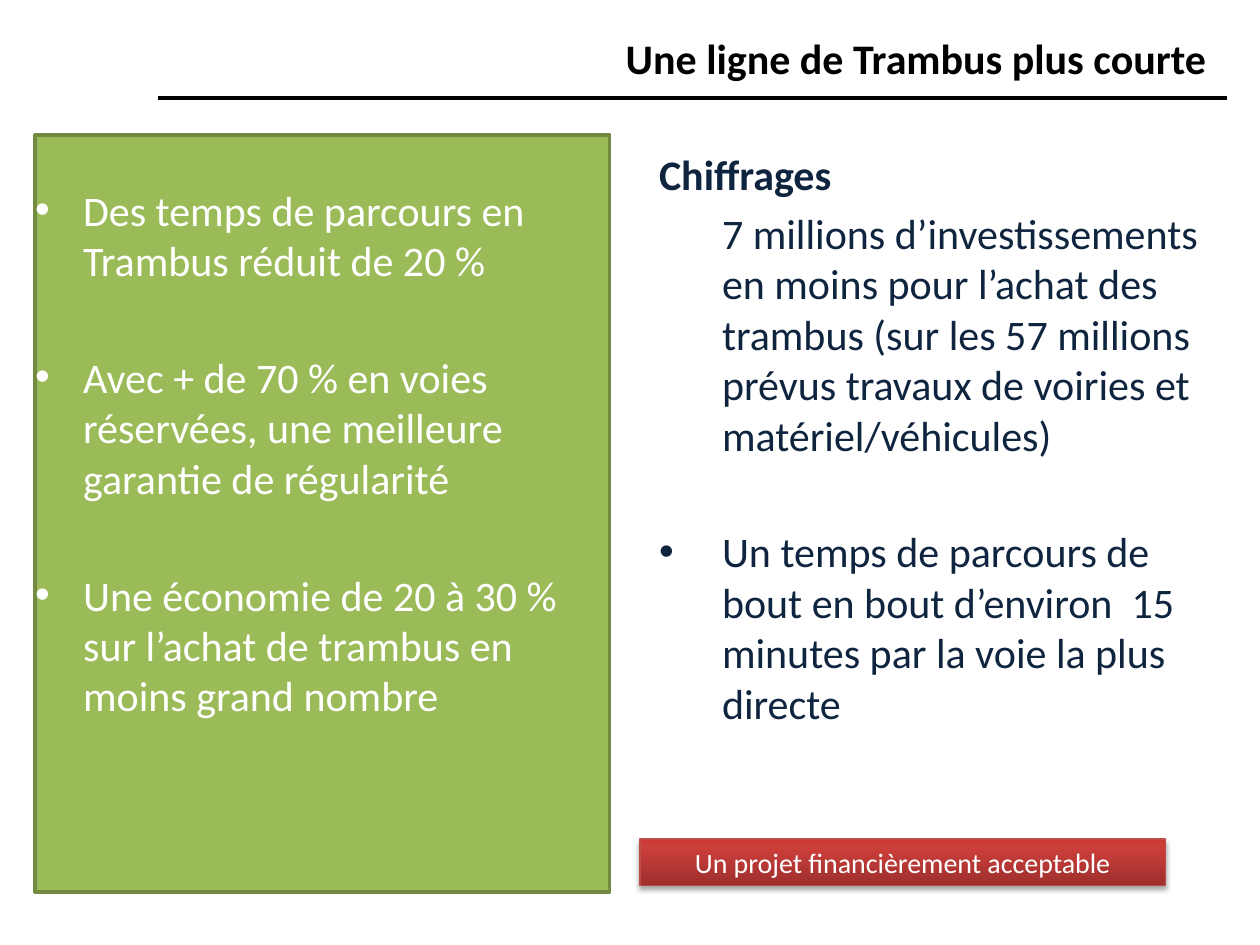
from dataclasses import dataclass

from lxml import etree
from pptx import Presentation
from pptx.dml.color import RGBColor
from pptx.enum.shapes import MSO_CONNECTOR, MSO_SHAPE
from pptx.enum.text import MSO_ANCHOR, PP_ALIGN
from pptx.oxml import parse_xml
from pptx.oxml.ns import nsdecls, qn
from pptx.util import Inches, Pt

BLACK = RGBColor(0x00, 0x00, 0x00)
WHITE = RGBColor(0xFF, 0xFF, 0xFF)
NAVY = RGBColor(0x0F, 0x24, 0x3E)
GREEN = RGBColor(0x9B, 0xBB, 0x59)
DARK_GREEN = RGBColor(0x73, 0x8A, 0x42)
RED_EDGE = RGBColor(0xBF, 0x4C, 0x48)
RED_STOPS = ((0, "9C2F2D"), (80, "CB3E3A"), (100, "CE3B37"))

FONT = "Calibri"
LINE_GAP = 4.8  # points between consecutive paragraphs
BLOCK_GAP = 38  # points between separate arguments


@dataclass(frozen=True)
class Box:
    left: float
    top: float
    width: float
    height: float

    def emu(self) -> tuple:
        return tuple(Inches(v) for v in (self.left, self.top, self.width, self.height))


@dataclass(frozen=True)
class Para:
    text: str
    before: float = 0
    margin: float = 0
    bullet: bool = False
    bold: bool = False


ADVANTAGES = [
    Para(text, before, margin=0.38, bullet=True)
    for text, before in (
        ("Des temps de parcours en Trambus réduit de 20 %", 0),
        ("Avec + de 70 % en voies réservées, une meilleure garantie de régularité", BLOCK_GAP),
        ("Une économie de 20 à 30 % sur l’achat de trambus en moins grand nombre", BLOCK_GAP),
    )
]
FIGURES = [
    Para("Chiffrages", bold=True),
    Para("7 millions d’investissements en moins pour l’achat des trambus (sur les 57 millions "
         "prévus travaux de voiries et matériel/véhicules)", LINE_GAP, margin=0.5),
    Para("Un temps de parcours de bout en bout d’environ  15 minutes par la voie la plus directe",
         BLOCK_GAP, margin=0.5, bullet=True),
]


def write(shape, paras: list[Para], *, color: RGBColor, size: float = 24,
          align=PP_ALIGN.LEFT, anchor=MSO_ANCHOR.TOP,
          insets: tuple = (0.1, 0.05, 0.1, 0.05)) -> None:
    """Fill a shape with formatted paragraphs; insets run left, top, right, bottom."""
    frame = shape.text_frame
    frame.word_wrap = True
    frame.vertical_anchor = anchor
    (frame.margin_left, frame.margin_top,
     frame.margin_right, frame.margin_bottom) = (Inches(v) for v in insets)
    for i, para in enumerate(paras):
        paragraph = frame.add_paragraph() if i else frame.paragraphs[0]
        paragraph.alignment = align
        paragraph.space_before = Pt(para.before)
        props = paragraph._p.get_or_add_pPr()
        if para.margin:
            props.set("marL", str(Inches(para.margin)))
        if para.bullet:
            props.set("indent", str(-Inches(para.margin)))
            etree.SubElement(props, qn("a:buFont")).set("typeface", "Arial")
            etree.SubElement(props, qn("a:buChar")).set("char", "•")
        run = paragraph.add_run()
        run.text = para.text
        font = run.font
        font.name, font.size, font.bold = FONT, Pt(size), para.bold
        font.color.rgb = color


def add_panel(slide, box: Box, edge: RGBColor, edge_width: float):
    panel = slide.shapes.add_shape(MSO_SHAPE.RECTANGLE, *box.emu())
    panel.shadow.inherit = False
    panel.line.color.rgb = edge
    panel.line.width = Pt(edge_width)
    return panel


def add_rule(slide, left: float, right: float, y: float) -> None:
    rule = slide.shapes.add_connector(
        MSO_CONNECTOR.STRAIGHT, Inches(left), Inches(y), Inches(right), Inches(y))
    rule.line.color.rgb = BLACK
    rule.line.width = Pt(2.25)
    etree.SubElement(rule._element.spPr, qn("a:effectLst"))


def shade_red(shape) -> None:
    """Three-stop vertical gradient and a soft shadow below."""
    shape.fill.gradient()
    gradient = shape._element.spPr.find(qn("a:gradFill"))
    stops = "".join(f'<a:gs pos="{pos * 1000}"><a:srgbClr val="{color}"/></a:gs>'
                    for pos, color in RED_STOPS)
    gradient.getparent().replace(gradient, parse_xml(
        f'<a:gradFill {nsdecls("a")} rotWithShape="1"><a:gsLst>{stops}</a:gsLst>'
        '<a:lin ang="16200000" scaled="0"/></a:gradFill>'))
    shape._element.spPr.find(qn("a:effectLst")).append(parse_xml(
        f'<a:outerShdw {nsdecls("a")} blurRad="{Pt(3.1)}" dist="{Pt(1.8)}" dir="5400000" '
        'rotWithShape="0"><a:srgbClr val="000000"><a:alpha val="35000"/></a:srgbClr>'
        '</a:outerShdw>'))


def main() -> None:
    prs = Presentation()
    prs.slide_width, prs.slide_height = Inches(10), Inches(7.5)
    slide = prs.slides.add_slide(prs.slide_layouts[6])

    # Title and its rule
    add_rule(slide, 1.25, 9.74, 0.78)
    title = slide.shapes.add_textbox(*Box(4.92, 0.14, 4.82, 0.64).emu())
    write(title, [Para("Une ligne de Trambus plus courte", bold=True)], color=BLACK,
          align=PP_ALIGN.CENTER, anchor=MSO_ANCHOR.BOTTOM, insets=(0, 0.12, 0.12, 0.12))

    # Conclusion banner
    conclusion = add_panel(slide, Box(5.08, 6.66, 4.17, 0.37), RED_EDGE, 0.75)
    shade_red(conclusion)
    write(conclusion, [Para("Un projet financièrement acceptable")], color=WHITE, size=16,
          align=PP_ALIGN.CENTER)

    # Advantages on green
    advantages = add_panel(slide, Box(0.28, 1.07, 4.56, 6.01), DARK_GREEN, 2)
    advantages.fill.solid()
    advantages.fill.fore_color.rgb = GREEN
    write(advantages, ADVANTAGES, color=WHITE, insets=(0, 0.39, 0.39, 0.39))

    # Cost and time figures
    figures = slide.shapes.add_textbox(*Box(4.84, 0.79, 4.88, 5.63).emu())
    write(figures, FIGURES, color=NAVY, insets=(0.39, 0.39, 0, 0.39))

    prs.save("out.pptx")


if __name__ == "__main__":
    main()
